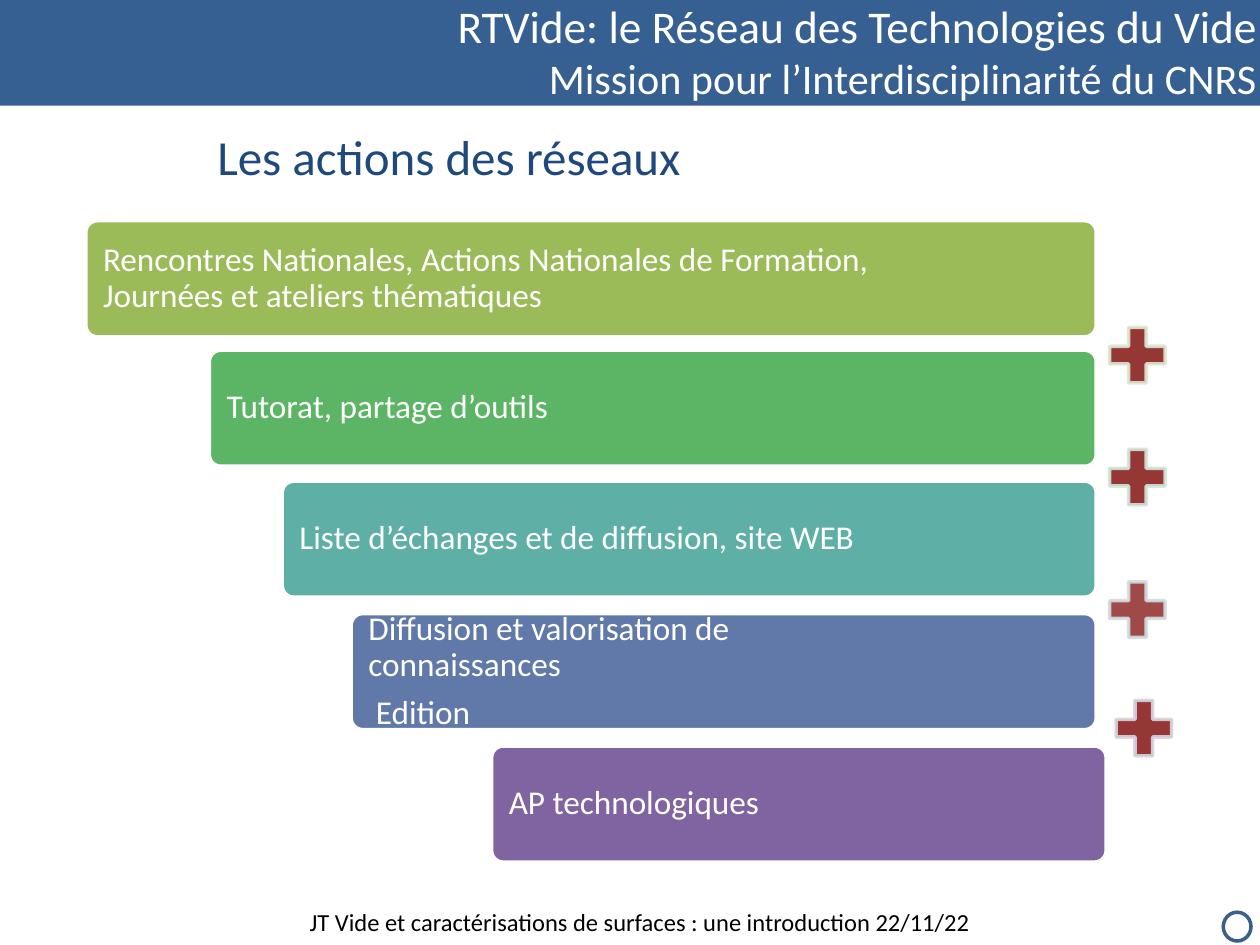
from lxml import etree
from pptx import Presentation
from pptx.dml.color import RGBColor
from pptx.enum.shapes import MSO_SHAPE as Shape
from pptx.enum.text import MSO_ANCHOR as Anchor, MSO_AUTO_SIZE as AutoSize, PP_ALIGN as Align
from pptx.oxml.ns import qn
from pptx.util import Cm, Pt


def paint(part, colour, opacity=100):
    """Fill a fill format or a font with a solid colour."""
    target = getattr(part, "fill", part)
    target.solid()
    target.fore_color.rgb = RGBColor.from_string(colour)
    if opacity < 100:
        node = target._xPr.find(".//" + qn("a:srgbClr"))
        etree.SubElement(node, qn("a:alpha")).set("val", str(opacity * 1000))


def write(box, lines, sizes, colour, frame_format, para_format):
    """Put one paragraph per line into a box."""
    frame = box.text_frame
    for name, value in {"word_wrap": True, "auto_size": AutoSize.NONE, **frame_format}.items():
        setattr(frame, name, value)
    for index, (line, size) in enumerate(zip(lines, sizes)):
        para = frame.paragraphs[0] if index == 0 else frame.add_paragraph()
        for name, value in para_format.items():
            setattr(para, name, value)
        span = para.add_run()
        span.text = line
        for name, value in {"name": "Calibri", "size": Pt(size)}.items():
            setattr(span.font, name, value)
        paint(span.font, colour)


deck = Presentation()
deck.slide_width, deck.slide_height = Cm(25.4), Cm(19.05)
page = deck.slides.add_slide(deck.slide_layouts[5])
shapes = page.shapes

# Footer and page marker
footer = shapes.add_shape(Shape.RECTANGLE, Cm(0.1), Cm(18.16), Cm(25.6), Cm(0.86))
footer.shadow.inherit = False
paint(footer, "FFFFFF")
footer.line.fill.background()
write(footer, ["JT Vide et caractérisations de surfaces : une introduction 22/11/22"], [14],
      "000000", {"vertical_anchor": Anchor.TOP}, {"alignment": Align.CENTER})

marker = shapes.add_shape(Shape.OVAL, Cm(24.66), Cm(18.39), Cm(0.56), Cm(0.58))
marker.shadow.inherit = False
paint(marker, "FFFFFF")
paint(marker.line, "3A5F8C")
marker.line.width = Pt(2)

# Header band
band = shapes.add_shape(Shape.RECTANGLE, Cm(0), Cm(-0.08), Cm(25.6), Cm(2.21))
band.shadow.inherit = False
paint(band, "376092")
band.line.fill.background()
write(band, ["RTVide: le Réseau des Technologies du Vide",
             "Mission pour l’Interdisciplinarité du CNRS"], [25.9, 24.1],
      "FFFFFF", {"vertical_anchor": Anchor.MIDDLE}, {"alignment": Align.RIGHT})

# Title
title = shapes.title
title.left, title.top, title.width, title.height = Cm(-0.1), Cm(2.13), Cm(25.7), Cm(2.01)
write(title, ["Les actions des réseaux"], [28], "1F497D",
      {"vertical_anchor": Anchor.MIDDLE, "margin_left": Cm(4.48)}, {"alignment": Align.LEFT})

# Staircase of actions: left, top, right, colour, lines
actions = [
    (1.73, 4.45, 22.1, "9BBB59",
     ["Rencontres Nationales, Actions Nationales de Formation, Journées et ateliers thématiques"]),
    (4.22, 7.06, 22.1, "5CB565", ["Tutorat, partage d’outils"]),
    (5.69, 9.7, 22.1, "5EAFA6", ["Liste d’échanges et de diffusion, site WEB"]),
    (7.08, 12.37, 22.1, "6179A8", ["Diffusion et valorisation de connaissances", " Edition"]),
    (9.91, 15.04, 22.3, "8064A2", ["AP technologiques"]),
]
action_frame = {"vertical_anchor": Anchor.MIDDLE, "margin_left": Cm(0.28), "margin_right": Cm(3.4),
                "margin_top": Cm(0.2), "margin_bottom": Cm(0.2)}
action_para = {"alignment": Align.LEFT, "line_spacing": 0.9, "space_after": Pt(6.65)}
for left, top, right, colour, lines in actions:
    step = shapes.add_shape(Shape.ROUNDED_RECTANGLE, Cm(left), Cm(top), Cm(right - left), Cm(2.34))
    step.adjustments[0] = 0.1
    step.shadow.inherit = False
    paint(step, colour)
    paint(step.line, "FFFFFF")
    step.line.width = Pt(2)
    write(step, lines, [19] * len(lines), "FFFFFF", action_frame, action_para)

# Plus signs between the steps: left, top, outline, fill opacity
pluses = [
    (22.17, 6.4, "DEE7D1", 100),
    (22.17, 8.86, "D2E5D9", 100),
    (22.17, 11.53, "D2DCE2", 90),
    (22.3, 13.92, "D8D3E0", 100),
]
for left, top, outline, opacity in pluses:
    plus = shapes.add_shape(Shape.MATH_PLUS, Cm(left), Cm(top), Cm(1.52), Cm(1.52))
    plus.shadow.inherit = False
    paint(plus, "953735", opacity)
    paint(plus.line, outline, 90)
    plus.line.width = Pt(2)

deck.save("out.pptx")
